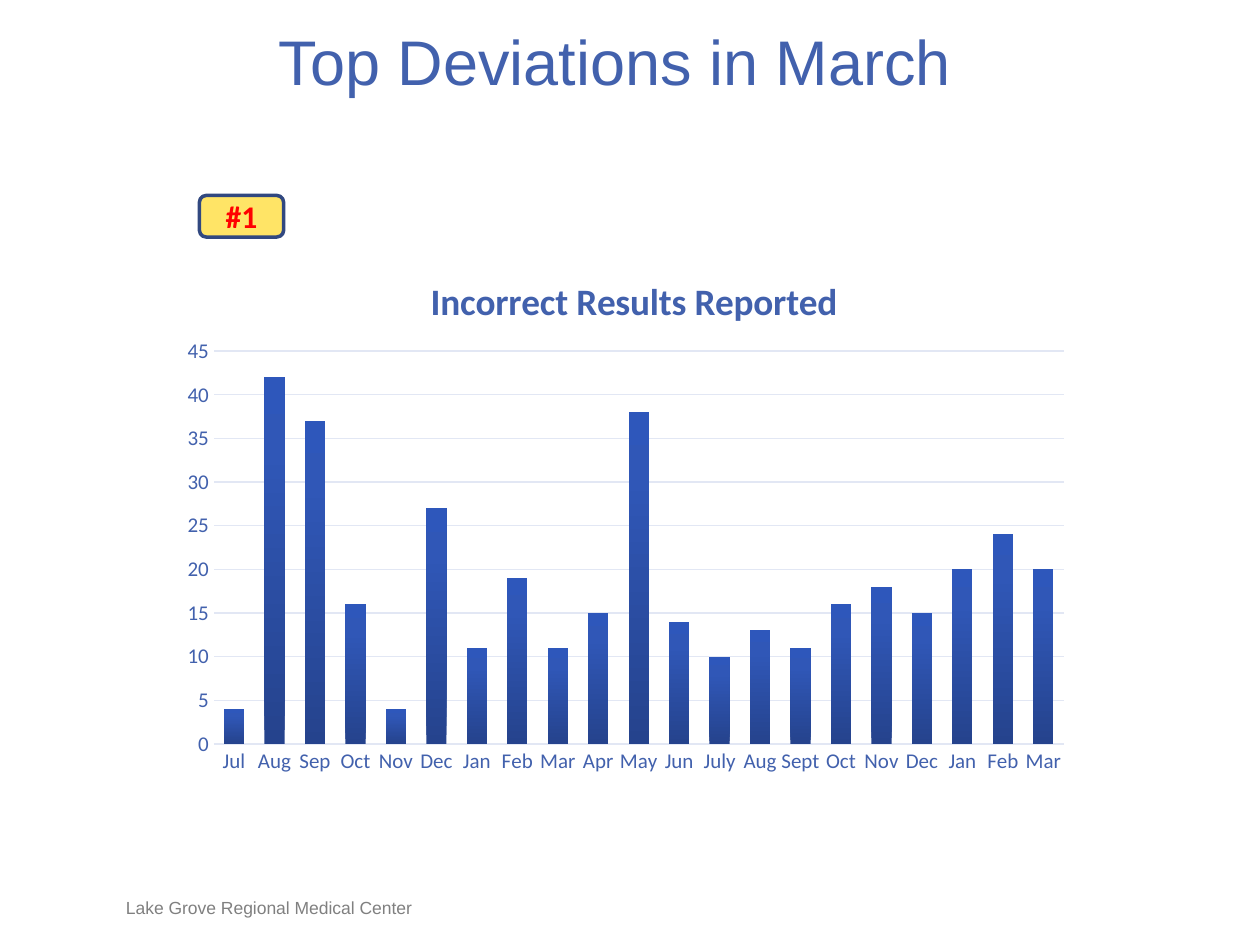
"""Build the monthly deviations slide with its column chart."""
from copy import deepcopy

from lxml import etree
from pptx import Presentation
from pptx.chart.data import CategoryChartData
from pptx.dml.color import RGBColor
from pptx.enum.chart import XL_CHART_TYPE, XL_TICK_MARK
from pptx.enum.shapes import MSO_SHAPE
from pptx.enum.text import MSO_ANCHOR, PP_ALIGN
from pptx.oxml.ns import qn
from pptx.util import Cm, Pt

COLUMNS = XL_CHART_TYPE.COLUMN_CLUSTERED
NO_TICK = XL_TICK_MARK.NONE
BADGE_SHAPE = MSO_SHAPE.ROUNDED_RECTANGLE
TOP, MIDDLE, BOTTOM = MSO_ANCHOR.TOP, MSO_ANCHOR.MIDDLE, MSO_ANCHOR.BOTTOM
LEFT, CENTER = PP_ALIGN.LEFT, PP_ALIGN.CENTER

BLUE = RGBColor(0x42, 0x61, 0xAD)
NAVY = RGBColor(0x31, 0x48, 0x80)
PALE = RGBColor(0xE2, 0xE7, 0xF4)
YELLOW = RGBColor(0xFF, 0xE4, 0x66)
RED = RGBColor(0xFF, 0x00, 0x00)
GRAY = RGBColor(0x80, 0x80, 0x80)
BAR_STOPS = [
    (0, RGBColor(0x25, 0x43, 0x8D)),
    (0.8, RGBColor(0x30, 0x57, 0xB7)),
    (1, RGBColor(0x2E, 0x57, 0xBB)),
]

TITLE = "Top Deviations in March"
FOOTER = "Lake Grove Regional Medical Center"
BADGE = "#1"
CHART_TITLE = "Incorrect Results Reported"
MONTHLY_RESULTS = [
    ("Jul", 4), ("Aug", 42), ("Sep", 37), ("Oct", 16), ("Nov", 4), ("Dec", 27),
    ("Jan", 11), ("Feb", 19), ("Mar", 11), ("Apr", 15), ("May", 38), ("Jun", 14),
    ("July", 10), ("Aug", 13), ("Sept", 11), ("Oct", 16), ("Nov", 18), ("Dec", 15),
    ("Jan", 20), ("Feb", 24), ("Mar", 20),
]
TITLE_LAYOUT = {"x": 0.28, "y": 0.05}
PLOT_LAYOUT = {"x": 0.05, "y": 0.2, "w": 0.93, "h": 0.72}


def style_font(font, name, size, color, bold=False):
    font.name, font.size, font.bold = name, Pt(size), bold
    font.color.rgb = color


def write_text(box, text, *, size, color, name="Arial", bold=False, align=LEFT, anchor=TOP):
    frame = box.text_frame
    frame.word_wrap = True
    frame.vertical_anchor = anchor
    frame.margin_left = frame.margin_right = frame.margin_top = frame.margin_bottom = 0
    para = frame.paragraphs[0]
    para.alignment = align
    span = para.add_run()
    span.text = text
    style_font(span.font, name, size, color, bold)


def place(element, before, target=None, **fractions):
    for old in element.findall(qn("c:layout")):
        element.remove(old)
    layout = etree.Element(qn("c:layout"))
    manual = etree.SubElement(layout, qn("c:manualLayout"))
    settings = {"layoutTarget": target} if target else {}
    settings.update(xMode="edge", yMode="edge", **fractions)
    for tag, value in settings.items():
        etree.SubElement(manual, qn(f"c:{tag}")).set("val", str(value))
    element.find(qn(before)).addprevious(layout)


def fill_bars(series):
    fill = series.format.fill
    fill.gradient()
    fill.gradient_angle = 90
    stops = series._element.find(".//" + qn("a:gsLst"))
    stops.append(deepcopy(stops[0]))
    for stop, (position, color) in zip(fill.gradient_stops, BAR_STOPS):
        stop.position = position
        stop.color.rgb = color


def style_axis(axis):
    axis.major_tick_mark = axis.minor_tick_mark = NO_TICK
    style_font(axis.tick_labels.font, "Calibri", 12, BLUE)


def style_line(line):
    line.color.rgb = PALE
    line.width = Pt(0.75)


def add_results_chart(page):
    data = CategoryChartData()
    data.categories = [month for month, _ in MONTHLY_RESULTS]
    data.add_series(CHART_TITLE, [count for _, count in MONTHLY_RESULTS])
    chart = page.shapes.add_chart(COLUMNS, Cm(3.39), Cm(4.88), Cm(18.42), Cm(11), data).chart
    chart.has_legend = False
    chart.font.name, chart.font.size = "Calibri", Pt(10)

    chart.has_title = True
    span = chart.chart_title.text_frame.paragraphs[0].add_run()
    span.text = CHART_TITLE
    style_font(span.font, "Calibri", 21.3, BLUE, bold=True)
    chart.chart_title.include_in_layout = False
    place(chart.chart_title._element, "c:overlay", **TITLE_LAYOUT)

    plot = chart.plots[0]
    plot.gap_width, plot.overlap, plot.vary_by_categories = 100, -24, False
    place(plot._element.getparent(), "c:barChart", target="inner", **PLOT_LAYOUT)
    fill_bars(plot.series[0])

    months, counts = chart.category_axis, chart.value_axis
    style_axis(months)
    style_axis(counts)
    style_line(months.format.line)
    style_line(counts.major_gridlines.format.line)
    counts.format.line.fill.background()
    counts.minimum_scale, counts.maximum_scale, counts.major_unit = 0, 45, 5


def add_badge(page):
    badge = page.shapes.add_shape(BADGE_SHAPE, Cm(4.02), Cm(3.94), Cm(1.7), Cm(0.84))
    badge.shadow.inherit = False
    badge.fill.solid()
    badge.fill.fore_color.rgb = YELLOW
    badge.line.color.rgb = NAVY
    badge.line.width = Pt(2)
    write_text(badge, BADGE, size=18, color=RED, name="Calibri", bold=True,
               align=CENTER, anchor=MIDDLE)


def main():
    deck = Presentation()
    deck.slide_width, deck.slide_height = Cm(25.4), Cm(19.05)
    page = deck.slides.add_slide(deck.slide_layouts[6])
    footer = page.shapes.add_textbox(Cm(2.54), Cm(18.08), Cm(8.05), Cm(0.43))
    write_text(footer, FOOTER, size=10, color=GRAY, anchor=BOTTOM)
    title = page.shapes.add_textbox(Cm(5.51), Cm(0.46), Cm(13.77), Cm(1.55))
    write_text(title, TITLE, size=36, color=BLUE, align=CENTER)
    add_badge(page)
    add_results_chart(page)
    deck.save("out.pptx")


if __name__ == "__main__":
    main()
